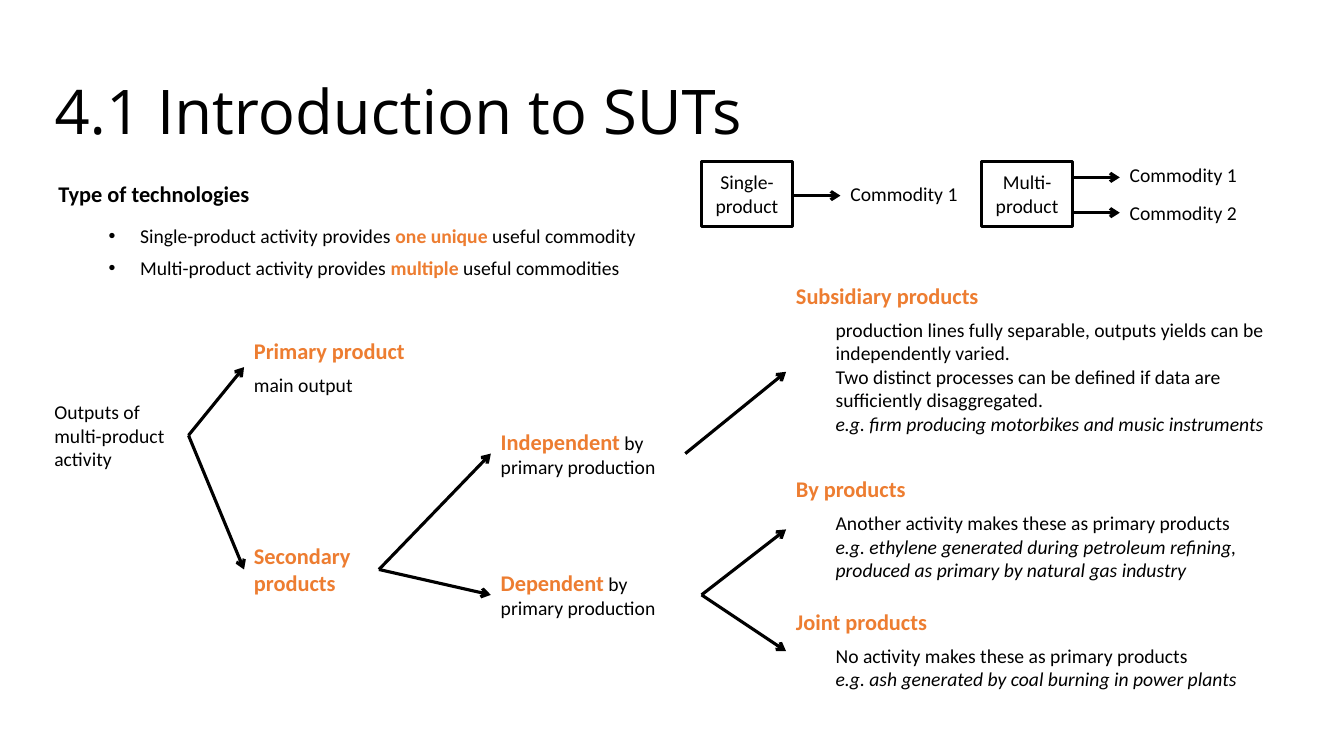
import pptx
import pptx.dml.color
import pptx.enum.shapes
import pptx.enum.text
import pptx.oxml
import pptx.oxml.ns
import pptx.util
from lxml import etree

Cm, Pt = pptx.util.Cm, pptx.util.Pt
ANCHOR = pptx.enum.text.MSO_ANCHOR
ALIGN = pptx.enum.text.PP_ALIGN
COLOURS = {"black": "000000", "orange": "ED7D31"}
# size, colour, bold, italic
STYLES = {
    "topic": (16, "black", True, False),
    "head": (16, "orange", True, False),
    "key": (14, "orange", True, False),
    "body": (14, "black", False, False),
    "example": (14, "black", False, True),
}


def colour(name):
    return pptx.dml.color.RGBColor.from_string(COLOURS[name])


def write_runs(paragraph, runs):
    """Add (style, text) runs; a "\n" text becomes a line break."""
    for style, text in runs:
        if text == "\n":
            paragraph.add_line_break()
            continue
        run = paragraph.add_run()
        run.text = text
        size, shade, run.font.bold, run.font.italic = STYLES[style]
        run.font.size = Pt(size)
        run.font.name = "Calibri"
        run.font.color.rgb = colour(shade)


deck = pptx.Presentation()
deck.slide_width, deck.slide_height = Cm(33.87), Cm(19.05)
slide = deck.slides.add_slide(deck.slide_layouts[5])

title = slide.shapes.title
title.left, title.top, title.width, title.height = Cm(1.12), Cm(0.03), Cm(28.78), Cm(3.81)
title.text_frame.auto_size = pptx.enum.text.MSO_AUTO_SIZE.NONE
title.text_frame.vertical_anchor = ANCHOR.BOTTOM
heading = title.text_frame.paragraphs[0]
heading.alignment = ALIGN.LEFT
heading.line_spacing = 0.9
heading_run = heading.add_run()
heading_run.text = "4.1 Introduction to SUTs"
heading_run.font.size = Pt(44)
heading_run.font.name = "Open Sans"
heading_run.font.color.rgb = colour("black")

BREAK = ("body", "\n")
# left, top, width, height in cm, then (kind, runs) per paragraph
text_blocks = [
    (1.22, 4.42, 17.37, 2.77, [
        ("plain", [("topic", "Type of technologies")]),
        ("bullet", [("body", "Single-product activity provides "), ("key", "one unique "),
                    ("body", "useful commodity")]),
        ("bullet", [("body", "Multi-product activity provides "), ("key", "multiple"),
                    ("body", " useful commodities")]),
    ]),
    (1.12, 9.96, 3.63, 2.06, [("plain", [("body", "Outputs of multi-product activity")])]),
    (6.15, 8.38, 4.34, 1.75, [
        ("plain", [("head", "Primary product")]),
        ("plain", [("body", "main output")]),
    ]),
    (6.15, 13.54, 3.43, 1.63, [("plain", [("head", "Secondary products")])]),
    (12.37, 10.67, 4.93, 1.55, [
        ("plain", [("head", "Independent"), ("body", " by primary production")])]),
    (12.37, 14.22, 5.31, 1.55, [
        ("plain", [("head", "Dependent"), ("body", " by primary production")])]),
    (19.81, 6.99, 13.44, 4.75, [
        ("plain", [("head", "Subsidiary products")]),
        ("indented", [
            ("body", "production lines fully separable, outputs yields can be independently varied."),
            BREAK,
            ("body", "Two distinct processes can be defined if data are sufficiently disaggregated."),
            BREAK,
            ("example", "e.g. firm producing motorbikes and music instruments")]),
    ]),
    (19.81, 11.86, 13.44, 2.95, [
        ("plain", [("head", "By products")]),
        ("indented", [
            ("body", "Another activity makes these as primary products"), BREAK,
            ("example", "e.g. ethylene generated during petroleum refining, "
                        "produced as primary by natural gas industry")]),
    ]),
    (19.81, 15.21, 13.67, 2.36, [
        ("plain", [("head", "Joint products")]),
        ("indented", [
            ("body", "No activity makes these as primary products"), BREAK,
            ("example", "e.g. ash generated by coal burning in power plants")]),
    ]),
    (21.18, 4.47, 3.35, 0.86, [("plain", [("body", "Commodity 1")])]),
    (28.22, 3.99, 3.56, 0.86, [("plain", [("body", "Commodity 1")])]),
    (28.22, 4.95, 3.56, 0.86, [("plain", [("body", "Commodity 2")])]),
]
for left, top, width, height, paragraphs in text_blocks:
    block = slide.shapes.add_textbox(Cm(left), Cm(top), Cm(width), Cm(height))
    frame = block.text_frame
    frame.word_wrap = True
    frame.auto_size = pptx.enum.text.MSO_AUTO_SIZE.SHAPE_TO_FIT_TEXT
    for index, (kind, runs) in enumerate(paragraphs):
        paragraph = frame.add_paragraph() if index else frame.paragraphs[0]
        properties = paragraph._p.get_or_add_pPr()
        if kind == "indented":
            properties.set("marL", str(Cm(1)))
        elif kind == "bullet":
            paragraph.level = 1
            properties.set("marL", str(Cm(2.06)))
            properties.set("indent", str(Cm(-0.79)))
            font = etree.SubElement(properties, pptx.oxml.ns.qn("a:buFont"))
            font.set("typeface", "Arial")
            bullet = etree.SubElement(properties, pptx.oxml.ns.qn("a:buChar"))
            bullet.set("char", "•")
        if index:
            paragraph.space_before = Pt(6)
        if runs[0][0] == "topic":
            paragraph.space_after = Pt(6)
        write_runs(paragraph, runs)

for left, label in [(17.68, "Single-product"), (24.74, "Multi-product")]:
    activity = slide.shapes.add_shape(
        pptx.enum.shapes.MSO_SHAPE.RECTANGLE, Cm(left), Cm(4.06), Cm(2.29), Cm(1.65))
    activity.shadow.inherit = False
    activity.fill.background()
    activity.line.color.rgb = colour("black")
    activity.line.width = Pt(2.25)
    activity.text_frame.word_wrap = True
    activity.text_frame.vertical_anchor = ANCHOR.MIDDLE
    label_line = activity.text_frame.paragraphs[0]
    label_line.alignment = ALIGN.CENTER
    write_runs(label_line, [("body", label)])

# start point, then the points its arrows lead to, in cm
branches = [
    ((19.96, 4.93), [(21.18, 4.93)]),
    ((27.03, 4.47), [(28.22, 4.47)]),
    ((27.03, 5.36), [(28.22, 5.36)]),
    ((4.75, 10.97), [(6.15, 9.25), (6.15, 14.35)]),
    ((9.55, 14.35), [(12.37, 11.43), (12.37, 14.99)]),
    ((17.27, 11.43), [(19.81, 9.37)]),
    ((17.68, 14.99), [(19.81, 13.34), (19.81, 16.41)]),
]
for (start_x, start_y), ends in branches:
    for end_x, end_y in ends:
        arrow = slide.shapes.add_connector(
            pptx.enum.shapes.MSO_CONNECTOR.STRAIGHT,
            Cm(start_x), Cm(start_y), Cm(end_x), Cm(end_y))
        arrow.line.color.rgb = colour("black")
        arrow.line.width = Pt(2.25)
        tail = etree.SubElement(arrow.line._get_or_add_ln(), pptx.oxml.ns.qn("a:tailEnd"))
        tail.set("type", "arrow")
        etree.SubElement(arrow._element.spPr, pptx.oxml.ns.qn("a:effectLst"))

deck.save("out.pptx")
